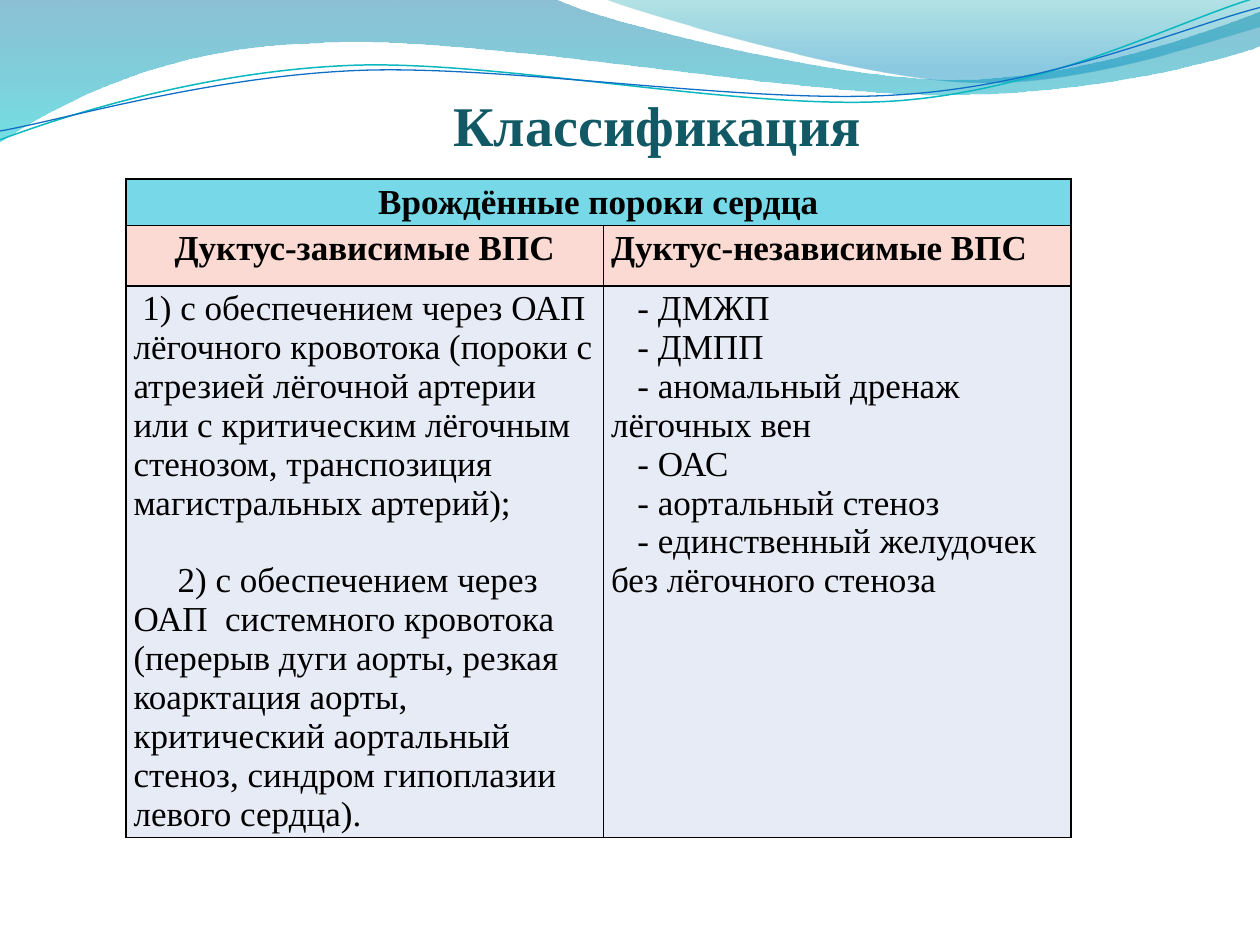
from math import cos, radians, sin

from lxml.etree import SubElement
from pptx import Presentation
from pptx.dml.color import RGBColor
from pptx.enum.text import PP_ALIGN
from pptx.oxml import parse_xml
from pptx.oxml.ns import nsdecls, qn
from pptx.util import Inches, Pt

WAVE_LEFT = [
    (0, 0), (4.4, -0.01), (4.76, 0.17, 6.64, 0.63, 7.58, 0.63),
    (8.53, 0.63, 9.58, 0.26, 10, 0.09), (10.01, 0.36),
    (9.83, 0.44, 8.7, 0.76, 7.46, 0.75), (6.22, 0.75, 3.82, 0.28, 2.57, 0.34),
    (1.29, 0.36, 0.46, 0.83, -0.01, 1.13), (0, 0),
]
WAVE_RIGHT = [
    (4.79, -0.01), (5.09, 0.11, 6.82, 0.62, 7.69, 0.65),
    (8.56, 0.69, 9.61, 0.32, 10, 0.21), (10, 0), (4.79, -0.01),
]
TEAL_STRAND = [
    (0, 1.11), (0.48, 0.93, 1.58, 0.57, 2.77, 0.52),
    (3.95, 0.47, 5.93, 0.89, 7.13, 0.8), (8.33, 0.71, 9.38, 0.15, 9.98, -0.02),
]
BLUE_STRAND = [
    (0, 1.04), (0.47, 0.96, 1.64, 0.61, 2.83, 0.56),
    (4.03, 0.51, 5.97, 0.84, 7.17, 0.75), (8.36, 0.67, 9.41, 0.21, 10, 0.06),
]
DEPENDENT = [
    "1) с обеспечением через ОАП лёгочного кровотока (пороки с атрезией лёгочной "
    "артерии или с критическим лёгочным стенозом, транспозиция магистральных артерий);",
    "2) с обеспечением через ОАП  системного кровотока (перерыв дуги аорты, резкая "
    "коарктация аорты, критический аортальный стеноз, синдром гипоплазии левого сердца).",
]
INDEPENDENT = [
    "- ДМЖП", "- ДМПП", "- аномальный дренаж лёгочных вен", "- ОАС",
    "- аортальный стеноз", "- единственный желудочек без лёгочного стеноза",
]


def color(value):
    return RGBColor.from_string(value)


def turn(x, y, degrees, center=(5, 0.58)):
    angle = radians(degrees)
    dx, dy = x - center[0], y - center[1]
    return (center[0] + dx * cos(angle) - dy * sin(angle),
            center[1] + dx * sin(angle) + dy * cos(angle))


class SlideBuilder:
    font = "Times New Roman"
    ink = "000000"
    tilt = -2.7
    column = row = Inches(1)

    def __init__(self, slide):
        self.slide = slide
        self.shapes = slide.shapes

    def box(self, left, top, width, height):
        return (int(left * self.column), int(top * self.row),
                int(width * self.column), int(height * self.row))

    def outline(self, segments, close, rotation=0):
        curves = []
        for segment in segments:
            pairs = zip(segment[::2], segment[1::2])
            turned = [turn(x, y, -rotation) for x, y in pairs]
            curves.append([(round(x * self.column), round(y * self.row)) for x, y in turned])
        anchors = [points[-1] for points in curves]
        builder = self.shapes.build_freeform(*anchors[0], scale=1.0)
        builder.add_line_segments(anchors[1:], close=close)
        shape = builder.convert_to_shape()
        shape.shadow.inherit = False
        lines = list(shape.element.iter(qn("a:lnTo")))
        for line, points in zip(lines, curves[1:]):
            if len(points) == 3:
                line.tag = qn("a:cubicBezTo")
                line.remove(line[0])
                for x, y in points:
                    point = SubElement(line, qn("a:pt"))
                    point.set("x", str(x - shape.left))
                    point.set("y", str(y - shape.top))
        shape.rotation = rotation
        return shape

    def wave(self, segments, stops):
        shape = self.outline(segments, True)
        shape.line.fill.background()
        marks = "".join(
            f'<a:gs pos="{position * 1000}"><a:srgbClr val="{tint}">'
            f'<a:alpha val="{alpha * 1000}"/></a:srgbClr></a:gs>'
            for position, tint, alpha in stops)
        gradient = parse_xml(
            f'<a:gradFill {nsdecls("a")} rotWithShape="1"><a:gsLst>{marks}</a:gsLst>'
            '<a:lin ang="5400000" scaled="0"/></a:gradFill>')
        shape.element.spPr.find(qn("a:custGeom")).addnext(gradient)

    def strand(self, segments, tint, weight):
        shape = self.outline(segments, False, self.tilt)
        shape.fill.background()
        shape.line.color.rgb = color(tint)
        shape.line.width = Pt(weight)

    def style(self, paragraph, size, tint, bold):
        for run in paragraph.runs:
            run.font.name = self.font
            run.font.size = Pt(size)
            run.font.bold = bold
            run.font.color.rgb = color(tint)

    def title(self, text, area, size, tint):
        frame = self.shapes.add_textbox(*self.box(*area)).text_frame
        frame.word_wrap = True
        frame.text = text
        self.style(frame.paragraphs[0], size, tint, True)

    def table(self, left, top, widths, heights):
        area = self.box(left, top, sum(widths), sum(heights))
        table = self.shapes.add_table(len(heights), len(widths), *area).table
        table.first_row = table.horz_banding = False
        for column, width in zip(table.columns, widths):
            column.width = int(width * self.column)
        for row, height in zip(table.rows, heights):
            row.height = int(height * self.row)
        return table

    def border(self, cell):
        properties = cell._tc.get_or_add_tcPr()
        for index, side in enumerate(("lnL", "lnR", "lnT", "lnB")):
            line = parse_xml(f'<a:{side} {nsdecls("a")} w="{Pt(1)}"/>')
            fill = SubElement(line, qn("a:solidFill"))
            SubElement(fill, qn("a:srgbClr")).set("val", self.ink)
            properties.insert(index, line)

    def cell(self, cell, lines, fill, bold=False, centered=False, indents=(0,), gap=0):
        cell.fill.solid()
        cell.fill.fore_color.rgb = color(fill)
        self.border(cell)
        cell.margin_left = cell.margin_right = Inches(0.06)
        cell.margin_top = cell.margin_bottom = Inches(0.03)
        cell.text_frame.text = "\n".join(lines)
        for index, paragraph in enumerate(cell.text_frame.paragraphs):
            self.style(paragraph, 20, self.ink, bold)
            paragraph.alignment = PP_ALIGN.CENTER if centered else PP_ALIGN.LEFT
            indent = indents[min(index, len(indents) - 1)]
            if indent:
                properties = paragraph._p.get_or_add_pPr()
                properties.set("marL", "0")
                properties.set("indent", str(Inches(indent)))
            if index and gap:
                paragraph.space_before = Pt(gap)


def main():
    presentation = Presentation()
    presentation.slide_width = Inches(10)
    presentation.slide_height = Inches(7.5)
    page = SlideBuilder(presentation.slides.add_slide(presentation.slide_layouts[6]))

    page.wave(WAVE_LEFT, [(0, "0074A1", 45), (100, "00C6CF", 55)])
    page.wave(WAVE_RIGHT, [(0, "00A1A9", 30), (80, "008BBF", 45)])
    page.strand(TEAL_STRAND, "0AB8BF", 0.85)
    page.strand(BLUE_STRAND, "0F6FC6", 0.75)

    defects = page.table(1, 1.42, (3.79, 3.71), (0.36, 0.48, 4.38))
    defects.cell(0, 0).merge(defects.cell(0, 1))
    page.cell(defects.cell(0, 0), ["Врождённые пороки сердца"], "77D9E8", True, True)
    page.border(defects.cell(0, 1))
    page.cell(defects.cell(1, 0), ["Дуктус-зависимые ВПС"], "FADAD2", True, True)
    page.cell(defects.cell(1, 1), ["Дуктус-независимые ВПС"], "FADAD2", True)
    page.cell(defects.cell(2, 0), DEPENDENT, "E7EBF5", indents=(0.07, 0.35), gap=22.3)
    page.cell(defects.cell(2, 1), INDEPENDENT, "E7EBF5", indents=(0.21,))

    page.title("Классификация", (3.5, 0.67, 3.5, 0.64), 32, "115964")
    presentation.save("out.pptx")


if __name__ == "__main__":
    main()
